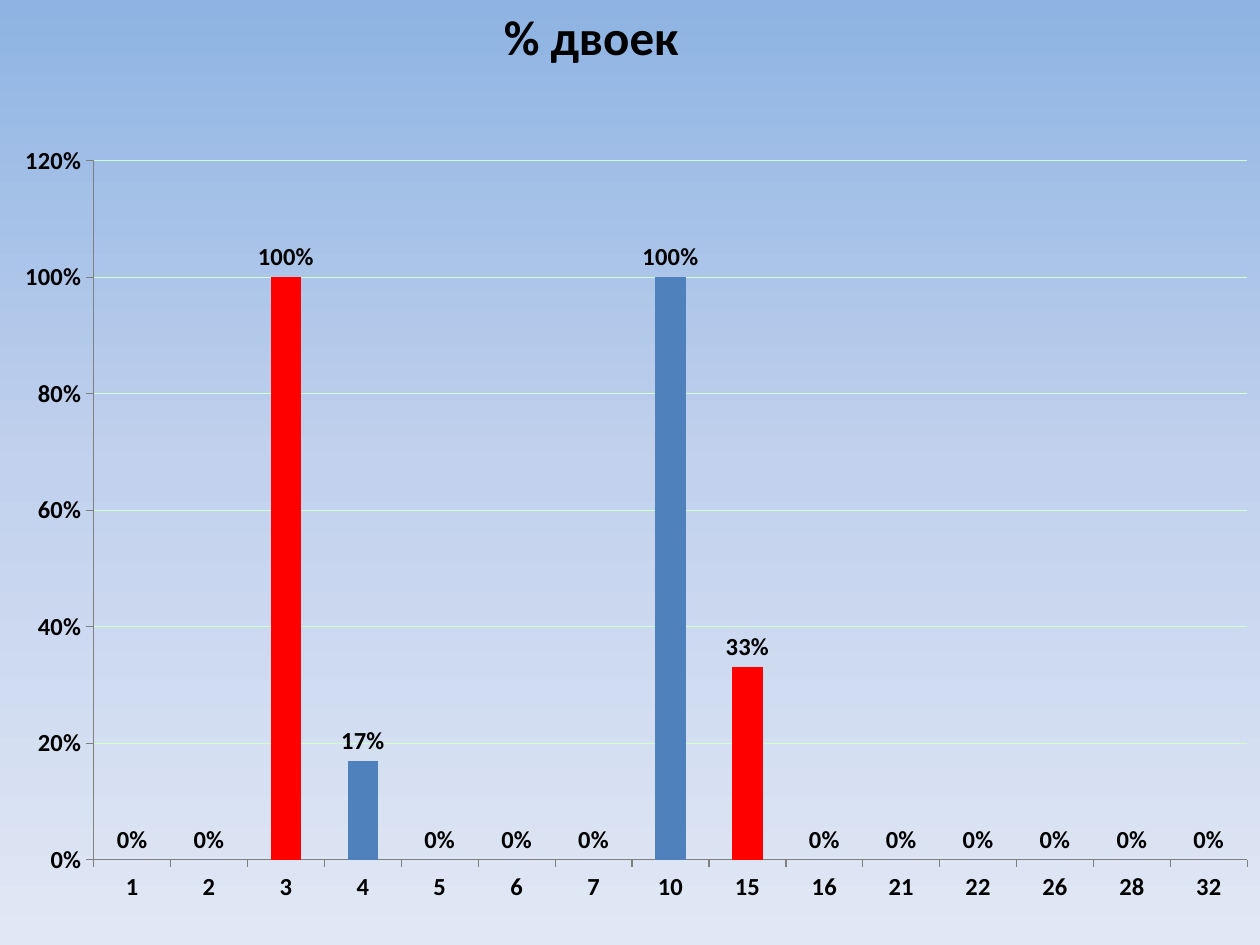
from copy import deepcopy
from lxml.etree import SubElement as Sub
from pptx import Presentation
from pptx.chart.data import CategoryChartData as Data
from pptx.dml.color import RGBColor as Rgb
from pptx.enum.chart import XL_CHART_TYPE as Kind, XL_LABEL_POSITION as Spot
from pptx.enum.chart import XL_TICK_MARK as Tick
from pptx.enum.text import MSO_AUTO_SIZE as Fit
from pptx.oxml.ns import qn
from pptx.util import Inches, Pt

HUES = {"ink": "000000", "bar": "4F81BD", "hot": "FF0000", "axis": "808080",
        "grid": "CCFFCC", "top": "8EB4E3", "mid": "C2D1ED", "low": "E1E8F5"}
RATES = {"1": 0, "2": 0, "3": 1, "4": 0.17, "5": 0, "6": 0, "7": 0, "10": 1,
         "15": 0.33, "16": 0, "21": 0, "22": 0, "26": 0, "28": 0, "32": 0}
HOT = ("3", "15")


class Deck:
    """Hold the style and the current slide, with lengths as shares of its size."""

    def __init__(self, wide, high, face):
        self.deck = Presentation()
        self.deck.slide_width, self.deck.slide_height = Inches(wide), Inches(high)
        self.face = face
        self.slide = self.deck.slides.add_slide(self.deck.slide_layouts[6])

    def box(self, x, y, w, h):
        wide, high = self.deck.slide_width, self.deck.slide_height
        return int(x * wide), int(y * high), int(w * wide), int(h * high)

    def hue(self, name):
        return Rgb.from_string(HUES[name])

    def font(self, font, size, bold=True):
        font.name, font.size, font.bold = self.face, Pt(size), bold
        font.color.rgb = self.hue("ink")

    def line(self, line, name):
        line.color.rgb, line.width = self.hue(name), Pt(0)

    def back(self, *names):
        fill = self.slide.background.fill
        fill.gradient()
        fill.gradient_angle = 270
        stops = next(self.slide.element.iter(qn("a:gsLst")))
        stops.insert(1, deepcopy(stops[0]))
        for i, (stop, name) in enumerate(zip(fill.gradient_stops, names)):
            stop.position = i / (len(names) - 1)
            stop.color.rgb = self.hue(name)

    def title(self, text, spot, size):
        frame = self.slide.shapes.add_textbox(*self.box(*spot)).text_frame
        frame.word_wrap, frame.auto_size = False, Fit.SHAPE_TO_FIT_TEXT
        frame.text = text
        self.font(frame.paragraphs[0].font, size)

    def axis(self, axis, size):
        axis.major_tick_mark, axis.minor_tick_mark = Tick.OUTSIDE, Tick.NONE
        self.font(axis.tick_labels.font, size)
        self.line(axis.format.line, "axis")

    def place(self, chart, *shares):
        area = next(chart.element.iter(qn("c:plotArea")))
        for old in area.findall(qn("c:layout")):
            area.remove(old)
        lay = Sub(area, qn("c:layout"))
        area.insert(0, lay)
        hand = Sub(lay, qn("c:manualLayout"))
        parts = [("layoutTarget", "outer"), ("xMode", "edge"), ("yMode", "edge")]
        for tag, val in parts + list(zip("xywh", shares)):
            Sub(hand, qn(f"c:{tag}"), val=str(val))

    def bars(self, rates, hot, spot, size):
        data = Data(number_format="0%")
        data.categories = list(rates)
        data.add_series("Series 1", list(rates.values()))
        chart = self.slide.shapes.add_chart(
            Kind.COLUMN_CLUSTERED, *self.box(*spot), data).chart
        chart.has_legend = chart.has_title = False
        self.font(chart.font, 10, False)
        self.place(chart, 0.02, 0.06, 0.97, 0.89)
        cats, vals = chart.category_axis, chart.value_axis
        for axis in (cats, vals):
            self.axis(axis, size)
        vals.minimum_scale, vals.maximum_scale, vals.major_unit = 0, 1.2, 0.2
        vals.tick_labels.number_format = "0%"
        vals.tick_labels.number_format_is_linked = False
        vals.has_major_gridlines = True
        self.line(vals.major_gridlines.format.line, "grid")
        plot = chart.plots[0]
        plot.vary_by_categories, plot.gap_width = False, 150
        row = plot.series[0]
        fills = [row.format.fill]
        fills += [row.points[list(rates).index(key)].format.fill for key in hot]
        for fill, name in zip(fills, ["bar"] + ["hot"] * len(hot)):
            fill.solid()
            fill.fore_color.rgb = self.hue(name)
        tags = row.data_labels
        tags.show_value, tags.position = True, Spot.OUTSIDE_END
        tags.number_format, tags.number_format_is_linked = "0%", False
        self.font(tags.font, size)


def main():
    deck = Deck(10, 7.5, "Calibri")
    deck.back("top", "mid", "low")
    deck.title("% двоек", (0.39, 0, 0.16, 0.08), 28)
    deck.bars(RATES, HOT, (0, 0.1, 1, 0.9), 14)
    deck.deck.save("out.pptx")


if __name__ == "__main__":
    main()
